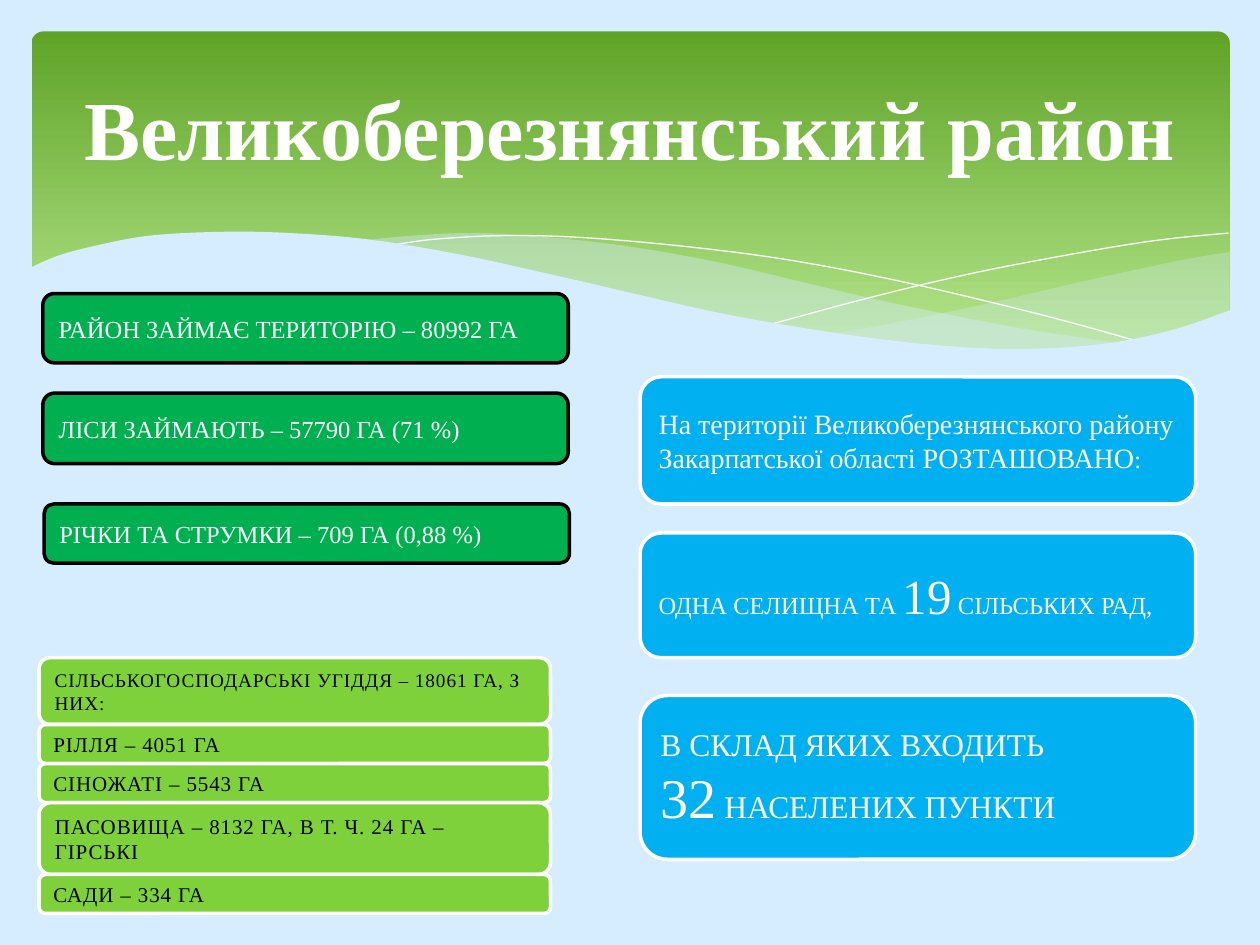
from itertools import accumulate
from lxml.etree import SubElement
from pptx import Presentation
from pptx.dml.color import RGBColor
from pptx.enum.shapes import MSO_SHAPE as SHAPE
from pptx.enum.text import MSO_ANCHOR as ANCHOR, PP_ALIGN as ALIGN
from pptx.oxml.ns import qn
from pptx.util import Inches, Pt

FONT = "Times New Roman"
SKY, WHITE, BLACK = "D6ECFF", "FFFFFF", "000000"
GREEN, LIME, BLUE = "00B050", "7FD13B", "00B0F0"

FAR_TOP = [(9.76, 2), (9.35, 2.07), (8.61, 2.23), (7.79, 2.42), (7.06, 2.57), (6.61, 2.65)]
FAR_BOTTOM = [(6.61, 2.65), (7.19, 2.72), (7.81, 2.77), (8.35, 2.77), (8.89, 2.72),
              (9.35, 2.62), (9.76, 2.47)]
MID_TOP = [(8.93, 2.73), (8.07, 2.6), (7.06, 2.4), (6.29, 2.22), (5.69, 2.08), (5.02, 1.96),
           (4.42, 1.89), (3.8, 1.85), (3.28, 1.87), (2.86, 1.91)]
MID_BOTTOM = [(2.86, 1.91), (3.62, 2.03), (4.49, 2.22), (5.3, 2.4), (6.01, 2.55), (6.8, 2.68),
              (7.48, 2.76), (8.07, 2.78), (8.57, 2.77), (8.93, 2.73)]
LONG_LINE = [(3.09, 1.95), (3.44, 1.9), (4.01, 1.87), (4.69, 1.89), (5.56, 1.97), (6.36, 2.08),
             (7.27, 2.26), (8.31, 2.51), (9.07, 2.72)]
SHORT_LINE = [(6.13, 2.57), (6.95, 2.35), (7.76, 2.16), (8.66, 1.99), (9.24, 1.9), (9.75, 1.85)]
NEAR_EDGE = [(9.77, 2.46), (9.3, 2.62), (8.75, 2.73), (8.09, 2.77), (7.44, 2.74), (6.68, 2.65),
             (5.79, 2.5), (5.03, 2.33), (4.47, 2.2), (3.65, 2.02), (2.92, 1.9), (2.3, 1.85),
             (1.77, 1.84), (1.19, 1.87), (0.76, 1.95), (0.46, 2.03), (0.23, 2.13)]


def rgb(value):
    return RGBColor.from_string(value)


def smooth(points, steps=6):
    ends = [points[0], *points, points[-1]]
    curve = []
    for a, b, c, d in zip(ends, ends[1:], ends[2:], ends[3:]):
        for t in (i / steps for i in range(steps)):
            curve.append(tuple(
                (2 * q + (r - p) * t + (2 * p - 5 * q + 4 * r - u) * t ** 2
                 + (3 * q - p - 3 * r + u) * t ** 3) / 2
                for p, q, r, u in zip(a, b, c, d)))
    return curve + [points[-1]]


def add_wave(s, points, color=None, opacity=100):
    start, *rest = [(Inches(x), Inches(y)) for x, y in points]
    builder = s.shapes.build_freeform(*start)
    builder.add_line_segments(rest, close=color is not None)
    sp = builder.convert_to_shape()
    sp.shadow.inherit = False
    if color is None:
        sp.fill.background()
        sp.line.color.rgb = rgb(WHITE)
        sp.line.width = Pt(0)
        return
    sp.fill.solid()
    sp.fill.fore_color.rgb = rgb(color)
    sp.line.fill.background()
    if opacity < 100:
        clr = sp.fill._xPr.find(qn("a:solidFill"))[0]
        SubElement(clr, qn("a:alpha")).set("val", str(opacity * 1000))


def add_header(s, left, top, width, height):
    sp = s.shapes.add_shape(SHAPE.ROUNDED_RECTANGLE, *map(Inches, (left, top, width, height)))
    sp.adjustments[0] = 0.034
    sp.shadow.inherit = False
    sp.line.fill.background()
    sp.fill.gradient()
    sp.fill.gradient_angle = 270
    for stop, color, position in zip(sp.fill.gradient_stops, ("5FA326", "B2E389"), (0, 0.9)):
        stop.color.rgb = rgb(color)
        stop.position = position
    add_wave(s, smooth(FAR_TOP) + smooth(FAR_BOTTOM), SKY, 29)
    add_wave(s, smooth(MID_TOP) + smooth(MID_BOTTOM), SKY, 40)
    add_wave(s, smooth(LONG_LINE))
    add_wave(s, smooth(SHORT_LINE))
    add_wave(s, smooth(NEAR_EDGE) + [(0.23, 3.29), (9.77, 3.29)], SKY)


def add_title(s, text, left, top, width, height):
    title = s.shapes.title
    title.left, title.top, title.width, title.height = map(Inches, (left, top, width, height))
    s.shapes._spTree.append(title._element)
    tf = title.text_frame
    tf.text = text
    tf.vertical_anchor = ANCHOR.MIDDLE
    tf.margin_bottom = Inches(0.35)
    p = tf.paragraphs[0]
    p.alignment = ALIGN.CENTER
    p.font.name, p.font.size, p.font.bold = FONT, Pt(48), True
    p.font.color.rgb = rgb(WHITE)


def add_card(s, box, paragraphs, fill, line, color, spacing=0):
    sp = s.shapes.add_shape(SHAPE.ROUNDED_RECTANGLE, *map(Inches, box))
    sp.shadow.inherit = False
    sp.fill.solid()
    sp.fill.fore_color.rgb = rgb(fill)
    sp.line.color.rgb = rgb(line)
    sp.line.width = Pt(2)
    tf = sp.text_frame
    tf.word_wrap = True
    tf.vertical_anchor = ANCHOR.MIDDLE
    for i, runs in enumerate(paragraphs):
        p = tf.add_paragraph() if i else tf.paragraphs[0]
        p.alignment = ALIGN.LEFT
        p.font.name = FONT
        p.font.color.rgb = rgb(color)
        for text, size in runs:
            r = p.add_run()
            r.text = text
            r.font.size = Pt(size)
            if spacing:
                r._r.get_or_add_rPr().set("spc", str(spacing))


def add_area_cards(s, left, width):
    for dx, top, height, text in [
        (0, 2.33, 0.55, "РАЙОН ЗАЙМАЄ ТЕРИТОРІЮ – 80992 ГА"),
        (0, 3.12, 0.56, "ЛІСИ ЗАЙМАЮТЬ – 57790 ГА (71 %)"),
        (0.01, 4, 0.47, "РІЧКИ ТА СТРУМКИ – 709 ГА (0,88 %)"),
    ]:
        add_card(s, (left + dx, top, width, height), [[(text, 14)]], GREEN, BLACK, WHITE)


def add_land_stack(s, left, top, width):
    rows = [
        (0.53, 11, "СІЛЬСЬКОГОСПОДАРСЬКІ УГІДДЯ – 18061 ГА, З НИХ:"),
        (0.31, 12, "РІЛЛЯ – 4051 ГА"),
        (0.31, 12, "СІНОЖАТІ – 5543 ГА"),
        (0.57, 12, "ПАСОВИЩА – 8132 ГА, В Т. Ч. 24 ГА – ГІРСЬКІ"),
        (0.31, 12, "САДИ – 334 ГА"),
    ]
    tops = accumulate((row[0] for row in rows), initial=top)
    for y, (height, size, text) in zip(tops, rows):
        add_card(s, (left, y, width, height), [[(text, size)]], LIME, WHITE, BLACK, 50)


def add_council_cards(s, left, width):
    for top, height, paragraphs in [
        (2.99, 1.01, [[("На території Великоберезнянського району Закарпатської області "
                        "РОЗТАШОВАНО", 16), (":", 14)]]),
        (4.23, 0.99, [[("ОДНА СЕЛИЩНА ТА ", 14), ("19", 28), (" СІЛЬСЬКИХ РАД,", 14)]]),
        (5.52, 1.3, [[("В СКЛАД ЯКИХ ВХОДИТЬ", 18)],
                     [("32", 32), (" НАСЕЛЕНИХ ПУНКТИ", 18)]]),
    ]:
        add_card(s, (left, top, width, height), paragraphs, BLUE, WHITE, WHITE)


def main():
    prs = Presentation()
    prs.slide_width, prs.slide_height = Inches(10), Inches(7.5)
    s = prs.slides.add_slide(prs.slide_layouts[5])
    s.background.fill.solid()
    s.background.fill.fore_color.rgb = rgb(SKY)
    add_header(s, 0.25, 0.25, 9.51, 2.7)
    add_title(s, "Великоберезнянський район", 0.5, 0.37, 9, 1.57)
    add_land_stack(s, 0.31, 5.22, 4.06)
    add_area_cards(s, 0.34, 4.17)
    add_council_cards(s, 5.08, 4.41)
    prs.save("out.pptx")


if __name__ == "__main__":
    main()
